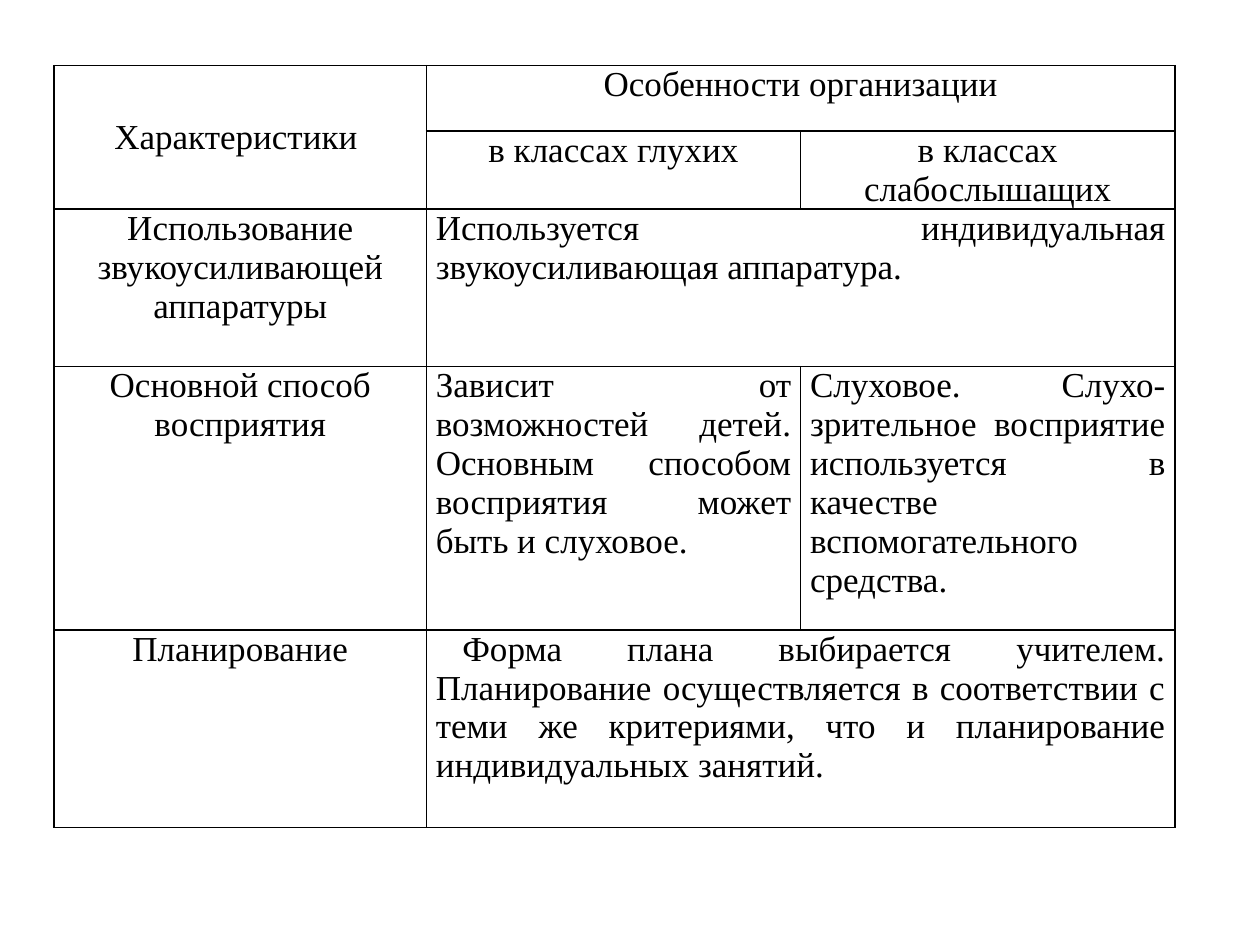
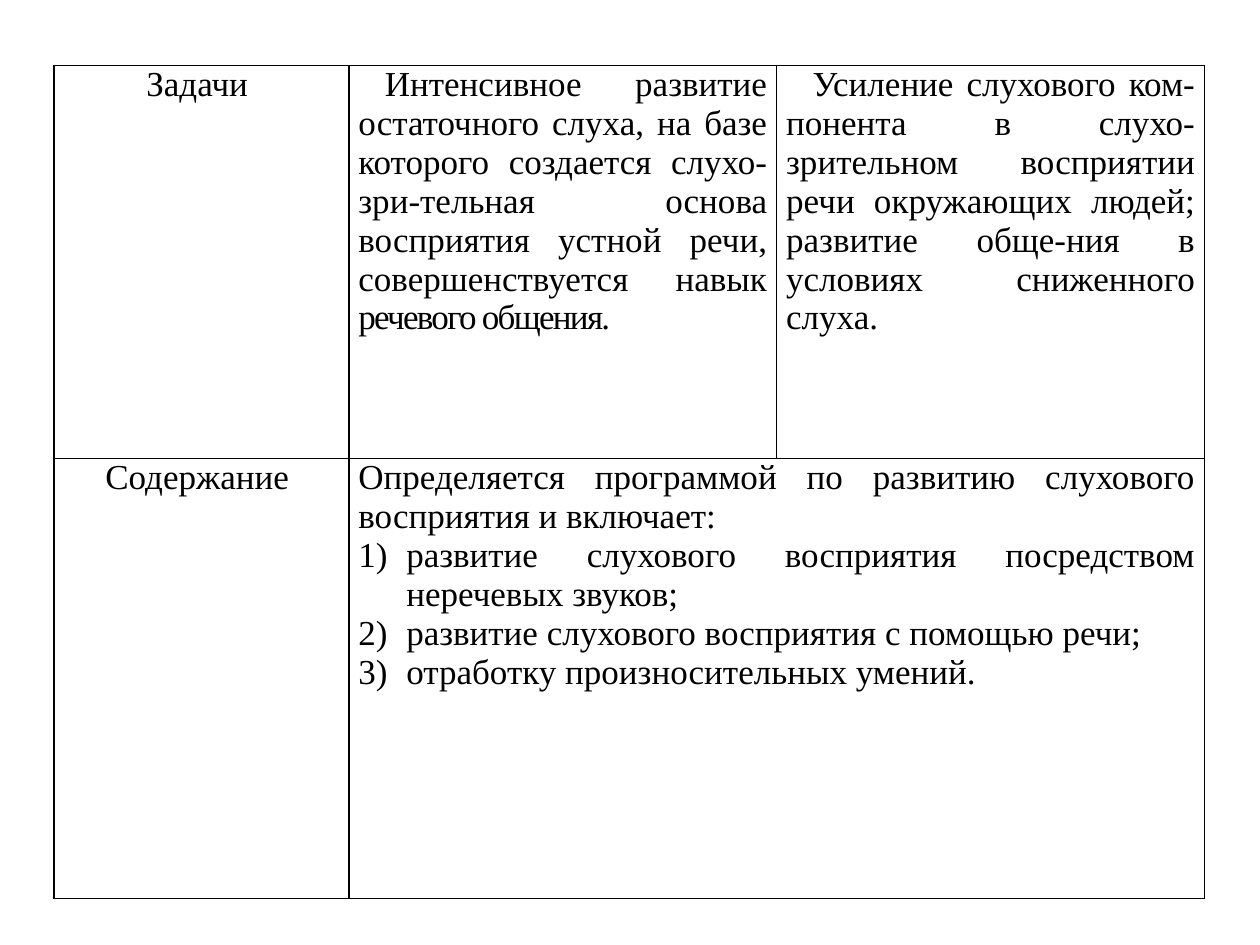
from dataclasses import dataclass
from itertools import product

from lxml import etree
from pptx import Presentation
from pptx.dml.color import RGBColor
from pptx.enum.text import MSO_ANCHOR, PP_ALIGN
from pptx.oxml.ns import qn
from pptx.util import Emu, Inches, Pt

CENTER = PP_ALIGN.CENTER
JUSTIFY = PP_ALIGN.JUSTIFY
TOP = MSO_ANCHOR.TOP
MIDDLE = MSO_ANCHOR.MIDDLE

BLACK = RGBColor(0, 0, 0)
FONT = "Times New Roman"
FONT_SIZE = Pt(20)
BORDER = Pt(1)

SLIDE_WIDTH = Inches(10)
SLIDE_HEIGHT = Inches(7.5)
COLUMN = SLIDE_WIDTH / 100
ROW = SLIDE_HEIGHT / 75
TABLE_LEFT = 4.3
TABLE_TOP = 5.2
SIDE_MARGIN = 0.75
FIRST_LINE = 2.1
LIST_INDENT = 3.8


@dataclass(frozen=True)
class Line:
    text: str
    align: int = JUSTIFY
    first_line: float = 0
    numbered: bool = False
    tight_ending: str = ""


@dataclass(frozen=True)
class Entry:
    row: int
    column: int
    lines: tuple[Line, ...]
    row_span: int = 1
    column_span: int = 1
    anchor: int = TOP


@dataclass(frozen=True)
class Grid:
    columns: tuple[float, ...]
    rows: tuple[float, ...]
    entries: tuple[Entry, ...]


def heading(row: int, column: int, text: str, **layout) -> Entry:
    return Entry(row, column, (Line(text, CENTER),), **layout)


def across(columns: float) -> Emu:
    return Emu(round(columns * COLUMN))


def down(rows: float) -> Emu:
    return Emu(round(rows * ROW))


ORGANIZATION = Grid(
    columns=(29.55, 29.7, 29.7),
    rows=(5.2, 6.2, 12.5, 20.9, 15.7),
    entries=(
        heading(0, 0, "Характеристики ", row_span=2, anchor=MIDDLE),
        heading(0, 1, "Особенности организации", column_span=2),
        heading(1, 1, "в классах глухих"),
        heading(1, 2, "в классах слабослышащих"),
        heading(2, 0, "Использование звукоусиливающей аппаратуры"),
        Entry(2, 1, (Line("Используется индивидуальная звукоусиливающая аппаратура."),),
              column_span=2),
        heading(3, 0, "Основной способ восприятия"),
        Entry(3, 1, (Line("Зависит от возможностей детей. Основным способом восприятия "
                          "может быть и слуховое. "),)),
        Entry(3, 2, (Line("Слуховое. Слухо-зрительное восприятие используется в качестве "
                          "вспомогательного средства. "),)),
        heading(4, 0, "Планирование"),
        Entry(4, 1, (Line("Форма плана выбирается учителем. Планирование осуществляется "
                          "в соответствии с теми же критериями, что и планирование "
                          "индивидуальных занятий.", first_line=FIRST_LINE),),
              column_span=2),
    ),
)

GOALS_AND_CONTENT = Grid(
    columns=(23.4, 33.95, 33.95),
    rows=(31.2, 34.9),
    entries=(
        heading(0, 0, "Задачи "),
        Entry(0, 1, (Line("Интенсивное развитие остаточного слуха, на базе которого "
                          "создается слухо-зри-тельная основа восприятия устной речи, "
                          "совершенствуется навык", first_line=FIRST_LINE,
                          tight_ending=" речевого общения."),)),
        Entry(0, 2, (Line("Усиление слухового ком-понента в слухо-зрительном восприятии "
                          "речи окружающих людей; развитие обще-ния в условиях "
                          "сниженного слуха.", first_line=FIRST_LINE),)),
        heading(1, 0, "Содержание "),
        Entry(1, 1, (
            Line("Определяется программой по развитию слухового восприятия и включает:"),
            Line("развитие слухового восприятия посредством неречевых звуков;", numbered=True),
            Line("развитие слухового восприятия с помощью речи;", numbered=True),
            Line("отработку произносительных умений.", numbered=True),
        ), column_span=2),
    ),
)


def write_text(paragraph, text: str, *, size=FONT_SIZE, color=BLACK, spacing: int = 0) -> None:
    run = paragraph.add_run()
    run.text = text
    run.font.name = FONT
    run.font.size = size
    run.font.color.rgb = color
    if spacing:
        run.font._element.set("spc", str(spacing))


def write_line(paragraph, line: Line) -> None:
    paragraph.alignment = line.align
    margin = LIST_INDENT if line.numbered else 0
    indent = -LIST_INDENT if line.numbered else line.first_line
    properties = paragraph._p.get_or_add_pPr()
    properties.set("marL", str(across(margin)))
    properties.set("indent", str(across(indent)))
    if line.numbered:
        etree.SubElement(properties, qn("a:buFont"), typeface="+mj-lt")
        etree.SubElement(properties, qn("a:buAutoNum"), type="arabicParenR")
    write_text(paragraph, line.text)
    if line.tight_ending:
        write_text(paragraph, line.tight_ending, spacing=-100)


def style_cell(cell) -> None:
    cell.margin_left = cell.margin_right = across(SIDE_MARGIN)
    cell.margin_top = cell.margin_bottom = 0
    cell.fill.background()
    properties = cell._tc.get_or_add_tcPr()
    for position, side in enumerate(("lnL", "lnR", "lnT", "lnB")):
        edge = etree.Element(qn(f"a:{side}"), w=str(BORDER))
        fill = etree.SubElement(edge, qn("a:solidFill"))
        etree.SubElement(fill, qn("a:srgbClr"), val=str(BLACK))
        properties.insert(position, edge)


def fill_entry(table, entry: Entry) -> None:
    cell = table.cell(entry.row, entry.column)
    if entry.row_span > 1 or entry.column_span > 1:
        cell.merge(table.cell(entry.row + entry.row_span - 1,
                              entry.column + entry.column_span - 1))
    cell.vertical_anchor = entry.anchor
    frame = cell.text_frame
    for number, line in enumerate(entry.lines):
        write_line(frame.add_paragraph() if number else frame.paragraphs[0], line)


def draw_grid(slide, grid: Grid) -> None:
    table = slide.shapes.add_table(
        len(grid.rows), len(grid.columns), across(TABLE_LEFT), down(TABLE_TOP),
        across(sum(grid.columns)), down(sum(grid.rows))).table
    table.first_row = table.horz_banding = False
    for column, width in zip(table.columns, grid.columns):
        column.width = across(width)
    for row, height in zip(table.rows, grid.rows):
        row.height = down(height)
    for row, column in product(range(len(grid.rows)), range(len(grid.columns))):
        style_cell(table.cell(row, column))
    for entry in grid.entries:
        fill_entry(table, entry)


def main() -> None:
    presentation = Presentation()
    presentation.slide_width = SLIDE_WIDTH
    presentation.slide_height = SLIDE_HEIGHT
    blank = presentation.slide_layouts[6]
    for grid in (ORGANIZATION, GOALS_AND_CONTENT):
        draw_grid(presentation.slides.add_slide(blank), grid)
    presentation.save("out.pptx")


if __name__ == "__main__":
    main()
